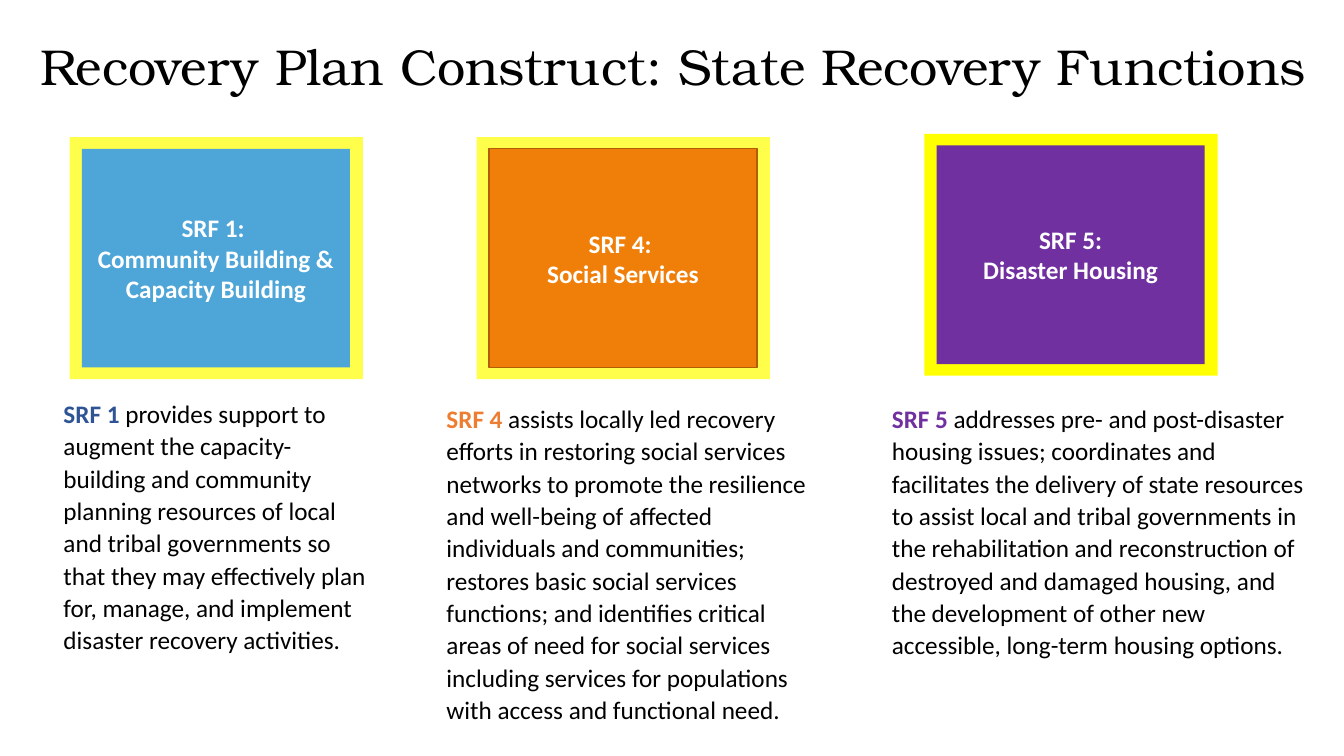
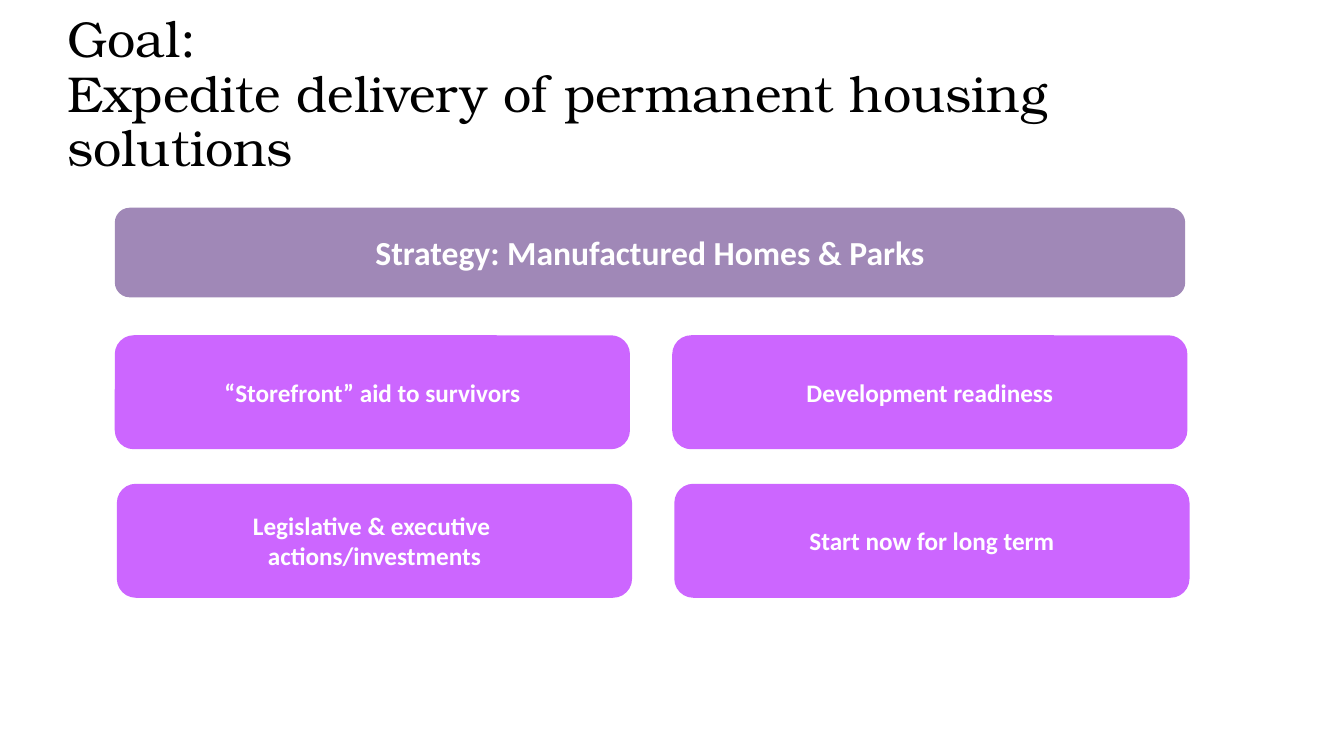
from pptx import Presentation
from pptx.dml.color import RGBColor
from pptx.enum.shapes import MSO_SHAPE
from pptx.enum.text import MSO_ANCHOR, MSO_AUTO_SIZE, PP_ALIGN
from pptx.util import Pt

RECTANGLE = MSO_SHAPE.RECTANGLE
ROUNDED = MSO_SHAPE.ROUNDED_RECTANGLE
MIDDLE = MSO_ANCHOR.MIDDLE
CENTER = PP_ALIGN.CENTER
GROW = MSO_AUTO_SIZE.SHAPE_TO_FIT_TEXT

TITLE_FONT = "TeX Gyre Bonum"
BODY_FONT = "Calibri"

BLACK = RGBColor(0x00, 0x00, 0x00)
WHITE = RGBColor(0xFF, 0xFF, 0xFF)
SOFT_YELLOW = RGBColor(0xFF, 0xFF, 0x4B)
YELLOW = RGBColor(0xFF, 0xFF, 0x00)
SKY = RGBColor(0x4E, 0xA5, 0xD8)
NAVY = RGBColor(0x2F, 0x54, 0x96)
ORANGE = RGBColor(0xF0, 0x7F, 0x09)
BROWN = RGBColor(0xB2, 0x5E, 0x07)
LIGHT_ORANGE = RGBColor(0xED, 0x7D, 0x31)
PURPLE = RGBColor(0x70, 0x30, 0xA0)
MAUVE = RGBColor(0xA0, 0x88, 0xB7)
VIOLET = RGBColor(0xCC, 0x66, 0xFF)

deck = Presentation()
deck.slide_width = Pt(960)
deck.slide_height = Pt(540)
blank = deck.slide_layouts[6]


def add_titled_slide(text, left, top, width):
    slide = deck.slides.add_slide(blank)
    title = slide.shapes.add_textbox(Pt(left), Pt(top), Pt(width), Pt(51.8))
    frame = title.text_frame
    frame.word_wrap = True
    frame.vertical_anchor = MIDDLE
    line = frame.paragraphs[0]
    line.text = text
    line.line_spacing = 0.9
    line.font.name = TITLE_FONT
    line.font.size = Pt(36)
    line.font.color.rgb = BLACK
    return slide


def add_panel(slide, outline, left, top, width, height, fill, text="", size=18):
    panel = slide.shapes.add_shape(outline, Pt(left), Pt(top), Pt(width), Pt(height))
    panel.shadow.inherit = False
    panel.fill.solid()
    panel.fill.fore_color.rgb = fill
    panel.line.fill.background()
    if text:
        frame = panel.text_frame
        frame.word_wrap = True
        frame.vertical_anchor = MIDDLE
        label = frame.paragraphs[0]
        label.text = text
        label.alignment = CENTER
        label.font.name = BODY_FONT
        label.font.size = Pt(size)
        label.font.bold = True
        label.font.color.rgb = WHITE
    return panel


functions_slide = add_titled_slide(
    "Recovery Plan Construct: State Recovery Functions", 21.6, 23.8, 923)

recovery_functions = [
    (49.7, 98, SOFT_YELLOW, SKY, None, "SRF 1: \vCommunity Building & Capacity Building",
     38.3, 279.4, 234.7, 216, NAVY, "SRF 1",
     " provides support to augment the capacity-building and community planning "
     "resources of local and tribal governments so that they may effectively plan "
     "for, manage, and implement disaster recovery activities."),
    (340.5, 98, SOFT_YELLOW, ORANGE, BROWN, "SRF 4: \vSocial Services",
     311.8, 283, 279.4, 270.7, LIGHT_ORANGE, "SRF 4",
     " assists locally led recovery efforts in restoring social services networks "
     "to promote the resilience and well-being of affected individuals and "
     "communities; restores basic social services functions; and identifies "
     "critical areas of need for social services including services for "
     "populations with access and functional need."),
    (660.2, 95.6, YELLOW, PURPLE, None, "SRF 5:\vDisaster Housing",
     630, 283, 314.6, 216, PURPLE, "SRF 5",
     " addresses pre- and post-disaster housing issues; coordinates and "
     "facilitates the delivery of state resources to assist local and tribal "
     "governments in the rehabilitation and reconstruction of destroyed and "
     "damaged housing, and the development of other new accessible, long-term "
     "housing options."),
]

for (left, top, frame_color, card_color, border, heading,
     text_left, text_top, text_width, text_height,
     accent, code, summary) in recovery_functions:
    add_panel(functions_slide, RECTANGLE, left, top, 209.5, 172.8, frame_color)
    card = add_panel(functions_slide, RECTANGLE, left + 8.8, top + 8.3,
                     191.5, 156.2, card_color, heading)
    if border:
        card.line.color.rgb = border
        card.line.width = Pt(1)

    description = functions_slide.shapes.add_textbox(
        Pt(text_left), Pt(text_top), Pt(text_width), Pt(text_height))
    description.text_frame.word_wrap = True
    description.text_frame.auto_size = GROW
    paragraph = description.text_frame.paragraphs[0]
    paragraph.line_spacing = 1.07
    paragraph.font.name = BODY_FONT
    paragraph.font.size = Pt(18)
    for text, color, bold in [(code, accent, True), (summary, BLACK, False)]:
        run = paragraph.add_run()
        run.text = text
        run.font.bold = bold
        run.font.color.rgb = color

goal_slide = add_titled_slide(
    "Goal: \vExpedite delivery of permanent housing solutions", 41, 42.5, 866.2)

add_panel(goal_slide, ROUNDED, 82, 148.4, 764.6, 64, MAUVE,
          "Strategy: Manufactured Homes & Parks", 24)

action_rows = [
    (82, 239.5, ["“Storefront” aid to survivors", "Development readiness"]),
    (83.5, 345.6, ["Legislative & executive \vactions/investments",
                   "Start now for long term"]),
]
for row_left, row_top, actions in action_rows:
    for column, action in enumerate(actions):
        add_panel(goal_slide, ROUNDED, row_left + column * 398.2, row_top,
                  368, 81.4, VIOLET, action)

deck.save("out.pptx")
